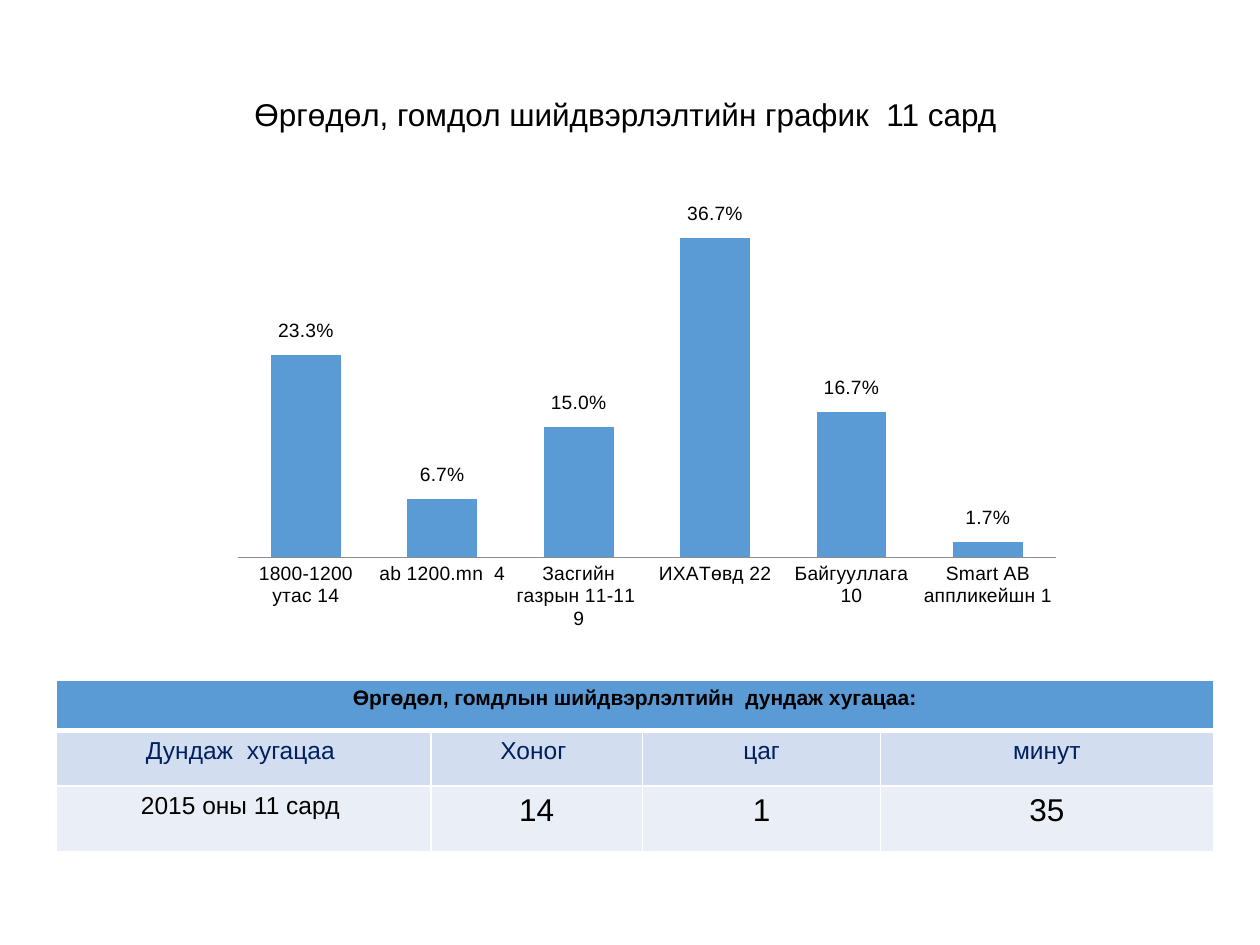
from dataclasses import dataclass

from pptx import Presentation
from pptx.chart.data import CategoryChartData
from pptx.dml.color import RGBColor
from pptx.enum.chart import XL_CHART_TYPE, XL_LABEL_POSITION, XL_TICK_MARK
from pptx.enum.text import MSO_ANCHOR, PP_ALIGN
from pptx.oxml import parse_xml
from pptx.oxml.ns import nsdecls
from pptx.util import Inches, Pt

STACKED = XL_CHART_TYPE.COLUMN_STACKED
MID_LABEL = XL_LABEL_POSITION.CENTER
NO_TICK = XL_TICK_MARK.NONE
CENTER = PP_ALIGN.CENTER
MIDDLE = MSO_ANCHOR.MIDDLE


@dataclass(frozen=True)
class Theme:
    font: str = "Arial"
    black: str = "000000"
    navy: str = "002060"
    blue: str = "5B9BD5"
    band: str = "D2DEEF"
    pale: str = "EAEFF7"
    white: str = "FFFFFF"
    axis: str = "8B8B8B"
    big: int = 18
    mid: int = 14
    head: int = 12
    label: int = 11


T = Theme()

# Content
TITLE = "Өргөдөл, гомдол шийдвэрлэлтийн график  11 сард "
SHARES = {
    "1800-1200 утас 14": 0.233,
    "ab 1200.mn  4": 0.067,
    "Засгийн газрын 11-11  9": 0.15,
    "ИХАТөвд 22": 0.367,
    "Байгууллага 10": 0.167,
    "Smart AB аппликейшн 1": 0.017,
}
HEAD = "Өргөдөл, гомдлын шийдвэрлэлтийн  дундаж хугацаа:"
UNITS = ["Дундаж  хугацаа ", "Хоног ", "цаг", "минут"]
TIMES = ["2015 оны 11 сард ", "14", "1", "35"]

# Layout
WIDE, HIGH = 10, 7.5
TITLE_BOX = (0.69, 0.41, 8.62, 1.02)
CHART_BOX = (1.68, 1.35, 6.91, 3.94)
TABLE_BOX = (0.45, 5.4, 9.18, 1.36)
COLS = [2.97, 1.68, 1.89, 2.64]
ROWS = [0.4, 0.44, 0.52]
PLOT = {"x": 0.03, "y": 0.08, "w": 0.94, "h": 0.7}
TOP = 0.4    # top of the value axis
LIFT = 0.05  # label above its bar, as a share of the chart's height


def rgb(code):
    return RGBColor.from_string(code)


def style(font, size, color=T.black, bold=False):
    font.name, font.size, font.bold = T.font, Pt(size), bold
    font.color.rgb = rgb(color)


def write(frame, text, space=None, **form):
    para = frame.paragraphs[0]
    para.alignment = CENTER
    para.line_spacing = space
    run = para.add_run()
    run.text = text
    style(run.font, **form)


def place(box):
    return [Inches(n) for n in box]


def layout(inner="", **spots):
    marks = "".join(f'<c:{k} val="{v:.3f}"/>' for k, v in spots.items())
    return parse_xml(f'<c:layout {nsdecls("c")}><c:manualLayout>{inner}{marks}'
                     '</c:manualLayout></c:layout>')


def border(cell, low=1):
    props = cell._tc.get_or_add_tcPr()
    for i, (side, width) in enumerate(zip("LRTB", (1, 1, 1, low))):
        props.insert(i, parse_xml(
            f'<a:ln{side} {nsdecls("a")} w="{Pt(width)}"><a:solidFill>'
            f'<a:srgbClr val="{T.white}"/></a:solidFill></a:ln{side}>'))


def fill(cell, text, back, low=1, **form):
    cell.fill.solid()
    cell.fill.fore_color.rgb = rgb(back)
    border(cell, low)
    if text:
        write(cell.text_frame, text, **form)


def hide_leaders(node):
    for old in node.findall("{*}showLeaderLines"):
        node.remove(old)
    node.append(parse_xml(f'<c:showLeaderLines {nsdecls("c")} val="0"/>'))
    node.append(parse_xml(
        f'<c:extLst {nsdecls("c")}>'
        '<c:ext uri="{CE6537A1-D6FC-4f65-9D91-7224C49458BB}" xmlns:c15='
        '"http://schemas.microsoft.com/office/drawing/2012/chart">'
        '<c15:showLeaderLines val="0"/></c:ext></c:extLst>'))


def add_chart(slide):
    data = CategoryChartData(number_format="0.0%")
    data.categories = list(SHARES)
    data.add_series("Series 1", list(SHARES.values()))
    chart = slide.shapes.add_chart(STACKED, *place(CHART_BOX), data).chart
    chart.has_legend = chart.has_title = False
    style(chart.font, T.label)
    plot = chart.plots[0]
    plot.gap_width, plot.overlap, plot.vary_by_categories = 95, 100, False

    # Axes and plot area
    cat, val = chart.category_axis, chart.value_axis
    cat.major_tick_mark = cat.minor_tick_mark = NO_TICK
    cat.format.line.color.rgb = rgb(T.axis)
    style(cat.tick_labels.font, T.label)
    val.visible = val.has_major_gridlines = False
    val.minimum_scale, val.maximum_scale = 0, TOP
    area = chart._chartSpace.chart.plotArea
    for old in area.findall("{*}layout"):
        area.remove(old)
    inner = ('<c:layoutTarget val="inner"/><c:xMode val="edge"/>'
             '<c:yMode val="edge"/>')
    area.insert(0, layout(inner, **PLOT))

    # Bars, each with its label lifted from the middle to above the top
    bars = plot.series[0]
    bars.format.fill.solid()
    bars.format.fill.fore_color.rgb = rgb(T.blue)
    labels = bars.data_labels
    labels.show_value = True
    labels.number_format, labels.number_format_is_linked = "0.0%", False
    style(labels.font, T.label)
    for i, share in enumerate(SHARES.values()):
        mark = bars.points[i].data_label
        style(mark.font, T.label)
        mark.position = MID_LABEL
        rise = share / TOP * PLOT["h"] / 2 + LIFT
        node = labels._element.findall("{*}dLbl")[i]
        node.insert(1, layout(x=0, y=-rise))
        node.insert(2, parse_xml(f'<c:numFmt {nsdecls("c")} '
                                 'formatCode="0.0%" sourceLinked="0"/>'))
    hide_leaders(labels._element)


def add_table(slide):
    table = slide.shapes.add_table(len(ROWS), len(COLS),
                                   *place(TABLE_BOX)).table
    for col, width in zip(table.columns, COLS):
        col.width = Inches(width)
    for row, height in zip(table.rows, ROWS):
        row.height = Inches(height)
    for c, (unit, time) in enumerate(zip(UNITS, TIMES)):
        fill(table.cell(0, c), "" if c else HEAD, T.blue, low=3,
             size=T.head, bold=True)
        fill(table.cell(1, c), unit, T.band, size=T.mid, color=T.navy)
        fill(table.cell(2, c), time, T.pale, size=T.big if c else T.mid)
    table.cell(0, 0).merge(table.cell(0, len(COLS) - 1))


def main():
    deck = Presentation()
    deck.slide_width, deck.slide_height = Inches(WIDE), Inches(HIGH)
    slide = deck.slides.add_slide(deck.slide_layouts[5])
    title = slide.shapes.title
    title.left, title.top, title.width, title.height = place(TITLE_BOX)
    title.text_frame.vertical_anchor = MIDDLE
    write(title.text_frame, TITLE, space=0.9, size=T.big)
    add_table(slide)
    add_chart(slide)
    deck.save("out.pptx")


if __name__ == "__main__":
    main()
